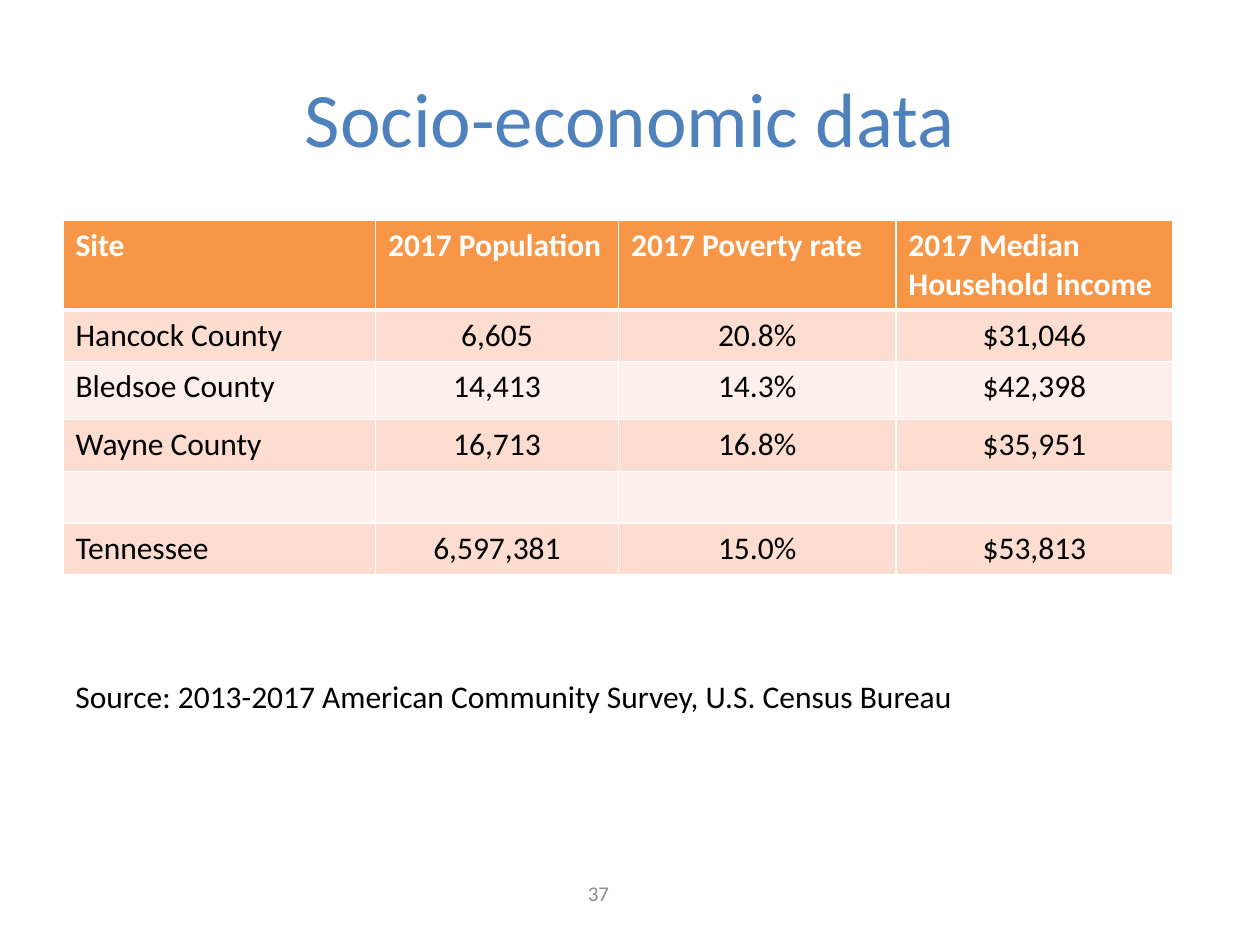
from lxml.etree import SubElement
from pptx import Presentation
from pptx.dml.color import RGBColor
from pptx.enum.text import MSO_ANCHOR, PP_ALIGN
from pptx.oxml.ns import qn
from pptx.util import Inches, Pt

WIDTH, HEIGHT = 10, 7.5
FONT = "Calibri"
BLUE, ORANGE, WHITE, BLACK, GREY = "4F81BD", "F79646", "FFFFFF", "000000", "8C8C8C"
BANDS = ["FCDDCF", "FDEFE9"]

COLUMN_WIDTHS = [2.48, 1.93, 2.2, 2.2]
ROW_HEIGHTS = [0.7, 0.41, 0.46, 0.41, 0.41, 0.41]
ROWS = [
    ["Site", "2017 Population", "2017 Poverty rate", "2017 Median Household income"],
    ["Hancock County", "6,605", "20.8%", "$31,046"],
    ["Bledsoe County", "14,413", "14.3%", "$42,398"],
    ["Wayne County", "16,713", "16.8%", "$35,951"],
    ["", "", "", ""],
    ["Tennessee", "6,597,381", "15.0%", "$53,813"],
]


def colour(code):
    return RGBColor.from_string(code)


class SlideBuilder:
    def __init__(self, page):
        self.page = page

    def area(self, left, top, width, height):
        return (Inches(left * WIDTH), Inches(top * HEIGHT),
                Inches(width * WIDTH), Inches(height * HEIGHT))

    def set_text(self, frame, text, size, code, align=PP_ALIGN.LEFT, bold=False):
        frame.text = text
        paragraph = frame.paragraphs[0]
        paragraph.alignment = align
        font = paragraph.font
        font.name, font.size, font.bold = FONT, Pt(size), bold
        font.color.rgb = colour(code)

    def title(self, text, *shares):
        box = self.page.shapes.title
        box.left, box.top, box.width, box.height = self.area(*shares)
        box.text_frame.vertical_anchor = MSO_ANCHOR.MIDDLE
        self.set_text(box.text_frame, text, 44, BLUE, PP_ALIGN.CENTER)

    def text(self, text, *shares, size=18, code=BLACK, align=PP_ALIGN.LEFT,
             anchor=MSO_ANCHOR.TOP, wrap=True):
        frame = self.page.shapes.add_textbox(*self.area(*shares)).text_frame
        frame.word_wrap = wrap
        frame.vertical_anchor = anchor
        self.set_text(frame, text, size, code, align)

    def borders(self, cell, top, bottom):
        properties = cell._tc.get_or_add_tcPr()
        for side, points in (("L", 1), ("R", 1), ("T", top), ("B", bottom)):
            line = SubElement(properties, qn(f"a:ln{side}"), w=str(Pt(points)))
            SubElement(SubElement(line, qn("a:solidFill")), qn("a:srgbClr"), val=WHITE)

    def table(self, rows, widths, heights, left, top):
        shares = self.area(left, top, sum(widths) / WIDTH, sum(heights) / HEIGHT)
        table = self.page.shapes.add_table(len(rows), len(widths), *shares).table
        for column, width in zip(table.columns, widths):
            column.width = Inches(width)
        for index, (row, height, values) in enumerate(zip(table.rows, heights, rows)):
            row.height = Inches(height)
            header = index == 0
            fill = ORANGE if header else BANDS[(index - 1) % 2]
            for position, (cell, value) in enumerate(zip(row.cells, values)):
                self.borders(cell, 3 if index == 1 else 1, 3 if header else 1)
                cell.fill.solid()
                cell.fill.fore_color.rgb = colour(fill)
                align = PP_ALIGN.LEFT if header or position == 0 else PP_ALIGN.CENTER
                self.set_text(cell.text_frame, value, 18,
                              WHITE if header else BLACK, align, header)


def main():
    deck = Presentation()
    deck.slide_width, deck.slide_height = Inches(WIDTH), Inches(HEIGHT)
    slide = SlideBuilder(deck.slides.add_slide(deck.slide_layouts[5]))
    slide.title("Socio-economic data", 0.05, 0.04, 0.9, 1 / 6)
    slide.table(ROWS, COLUMN_WIDTHS, ROW_HEIGHTS, 0.05, 1.75 / HEIGHT)
    slide.text("Source: 2013-2017 American Community Survey, U.S. Census Bureau",
               0.05, 0.71, 0.72, 0.05, wrap=False)
    slide.text("37", 0.36, 0.92, 0.23, 0.05, size=12, code=GREY,
               align=PP_ALIGN.CENTER, anchor=MSO_ANCHOR.MIDDLE)
    deck.save("out.pptx")


if __name__ == "__main__":
    main()
